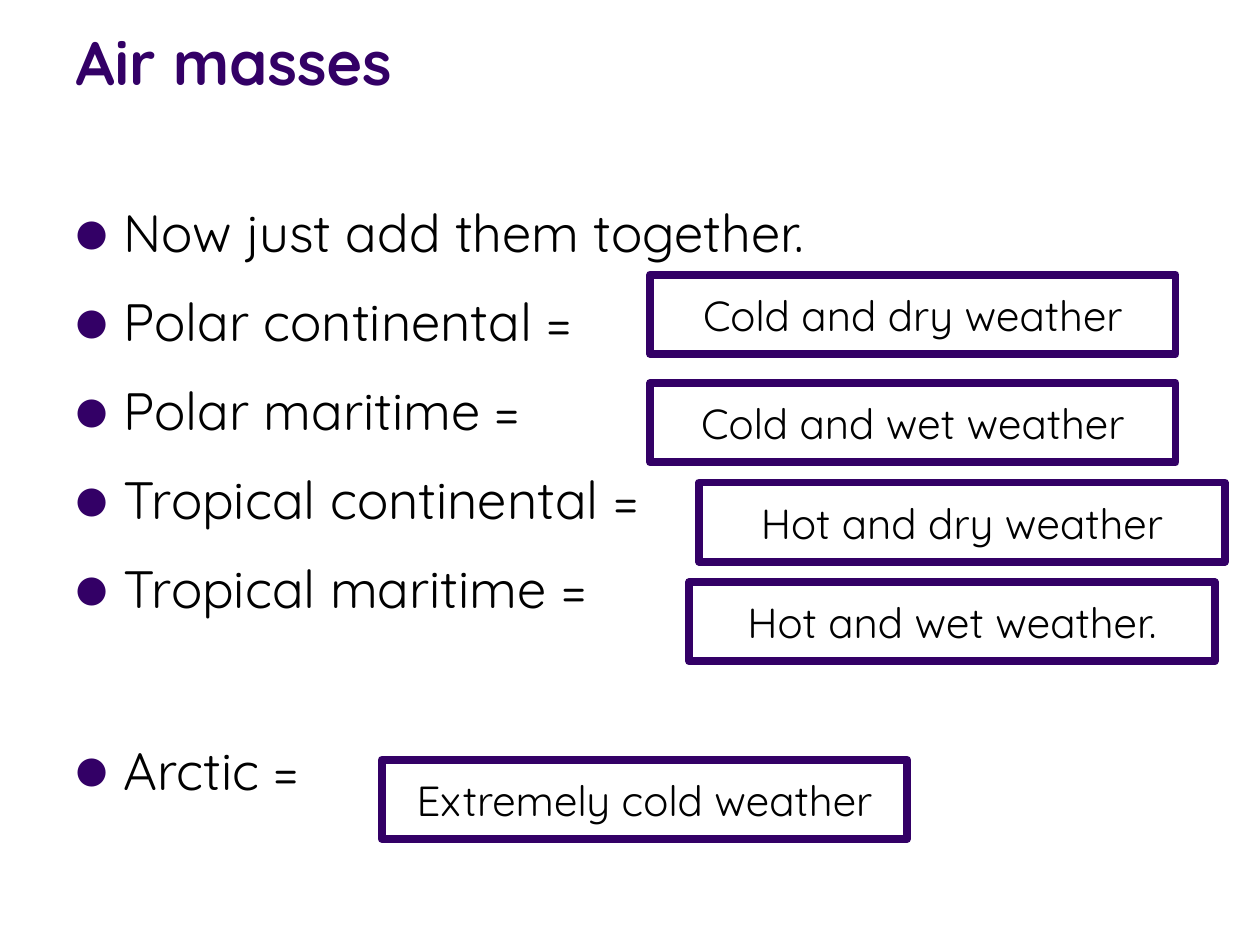
from lxml.etree import SubElement
from pptx import Presentation
from pptx.dml.color import RGBColor
from pptx.enum.shapes import MSO_SHAPE as Shape
from pptx.enum.text import MSO_ANCHOR as Anchor, MSO_AUTO_SIZE as AutoSize, PP_ALIGN as Align
from pptx.oxml.ns import qn
from pptx.util import Inches, Pt

COLOURS = {"accent": "330066", "text": "000000", "paper": "FFFFFF"}
FONT = "Quicksand"
BULLET_INDENT = Inches(0.38)
ANSWER_SIZE = (4.17, 0.63)

FACTS = [
    "Now just add them together.",
    "Polar continental =",
    "Polar maritime =",
    "Tropical continental =",
    "Tropical maritime =",
    "Arctic =",
]
ANSWERS = [
    ("Cold and dry weather", 5.16, 2.18),
    ("Cold and wet weather", 5.16, 3.04),
    ("Hot and dry weather", 5.55, 3.83),
    ("Hot and wet weather.", 5.47, 4.62),
    ("Extremely cold weather", 3.03, 6.03),
]


def colour(name):
    return RGBColor.from_string(COLOURS[name])


def set_all(target, values):
    for name, value in values.items():
        setattr(target, name, value)


class SlideBuilder:
    """Holds the shared style and the slide being filled."""

    def __init__(self, page):
        self.page = page

    def place(self, shape, left, top, width, height):
        set_all(shape, {"left": Inches(left), "top": Inches(top),
                        "width": Inches(width), "height": Inches(height)})

    def add_text(self, para, text, size, ink="text", bold=False, **layout):
        span = para.add_run()
        span.text = text
        set_all(span.font, {"name": FONT, "size": Pt(size), "bold": bold})
        span.font.color.rgb = colour(ink)
        set_all(para, layout)

    def add_bullet(self, para):
        props = para._p.get_or_add_pPr()
        props.set("marL", str(BULLET_INDENT))
        props.set("indent", str(-BULLET_INDENT))
        tint = SubElement(props, qn("a:buClr"))
        SubElement(tint, qn("a:srgbClr"), val=COLOURS["accent"])
        SubElement(props, qn("a:buSzPct"), val="70000")
        SubElement(props, qn("a:buFont"), typeface=FONT)
        SubElement(props, qn("a:buChar"), char="●")

    def title(self, text, *position):
        box = self.page.shapes.title
        self.place(box, *position)
        frame = box.text_frame
        set_all(frame, {"auto_size": AutoSize.NONE, "vertical_anchor": Anchor.BOTTOM})
        self.add_text(frame.paragraphs[0], text, 35, "accent", True, alignment=Align.LEFT)

    def bullets(self, items, *position):
        box = self.page.placeholders[1]
        self.place(box, *position)
        frame = box.text_frame
        frame.auto_size = AutoSize.NONE
        for index, item in enumerate(items):
            para = frame.add_paragraph() if index else frame.paragraphs[0]
            # The last item stands one full line apart from the others.
            gap = 0 if index == 0 else 57 if index == len(items) - 1 else 4
            self.add_text(para, item, 30, line_spacing=1.3, space_before=Pt(gap))
            self.add_bullet(para)

    def answer(self, text, left, top):
        box = self.page.shapes.add_shape(Shape.RECTANGLE, 0, 0, 0, 0)
        self.place(box, left, top, *ANSWER_SIZE)
        box.shadow.inherit = False
        box.fill.solid()
        box.fill.fore_color.rgb = colour("paper")
        box.line.color.rgb = colour("accent")
        box.line.width = Pt(4.5)
        frame = box.text_frame
        set_all(frame, {"word_wrap": False, "vertical_anchor": Anchor.MIDDLE})
        self.add_text(frame.paragraphs[0], text, 24, alignment=Align.CENTER)


def main():
    deck = Presentation()
    set_all(deck, {"slide_width": Inches(10), "slide_height": Inches(7.5)})
    builder = SlideBuilder(deck.slides.add_slide(deck.slide_layouts[1]))
    builder.title("Air masses", 0.5, 0.13, 8.25, 0.7)
    builder.bullets(FACTS, 0.5, 1.39, 9, 5.32)
    for text, left, top in ANSWERS:
        builder.answer(text, left, top)
    deck.save("out.pptx")


if __name__ == "__main__":
    main()
